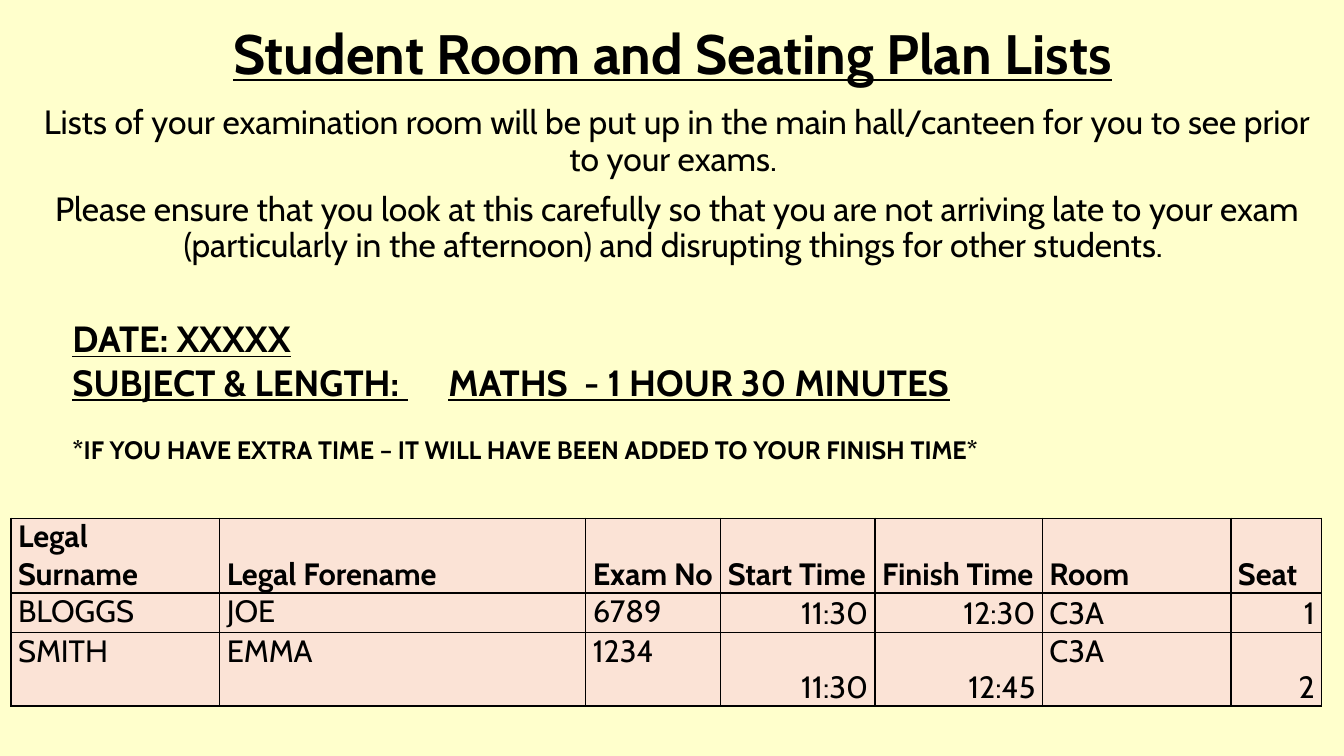
from pptx import Presentation
from pptx.dml.color import RGBColor
from pptx.enum.text import MSO_ANCHOR, MSO_AUTO_SIZE, PP_ALIGN
from pptx.oxml import parse_xml
from pptx.oxml.ns import nsdecls
from pptx.util import Inches, Pt

HUES = {"page": "FFFFCC", "ink": "000000", "cell": "FBE3D6"}
WIDTHS = [2.07, 3.63, 1.34, 1.53, 1.66, 1.87, 0.9]
HEIGHTS = [0.74, 0.39, 0.73]
ROWS = [
    ["Legal Surname", "Legal Forename", "Exam No", "Start Time",
     "Finish Time", "Room", "Seat"],
    ["BLOGGS", "JOE", "6789", "11:30", "12:30", "C3A", "1"],
    ["SMITH", "EMMA", "1234", "11:30", "12:45", "C3A", "2"],
]
RIGHT = {3, 4, 6}
TOP = {(row, col) for row in (1, 2) for col in range(3)} | {(2, 5)}
INTRO = [
    "Lists of your examination room will be put up in the main hall/canteen "
    "for you to see prior to your exams. ",
    "Please ensure that you look at this carefully so that you are not "
    "arriving late to your exam (particularly in the afternoon) and "
    "disrupting things for other students. ",
]
NOTE = "*IF YOU HAVE EXTRA TIME – IT WILL HAVE BEEN ADDED TO YOUR FINISH TIME*"


class Deck:
    """Holds the style and the current slide, and adds each kind of element."""

    def __init__(self):
        self.show = Presentation()
        self.show.slide_width = Inches(13.33)
        self.show.slide_height = Inches(7.5)
        self.slide = self.show.slides.add_slide(self.show.slide_layouts[1])
        self.font = "Cabin"
        fill = self.slide.background.fill
        fill.solid()
        fill.fore_color.rgb = self.hue("page")

    def hue(self, name):
        return RGBColor.from_string(HUES[name])

    def place(self, shape, *box):
        shape.left, shape.top, shape.width, shape.height = map(Inches, box)

    def run(self, para, text, size, bold=False, line=False):
        run = para.add_run()
        run.text = text
        font = run.font
        font.name, font.size = self.font, Pt(size)
        font.bold, font.underline = bold, line
        font.color.rgb = self.hue("ink")

    def title(self, text, *box):
        shape = self.slide.shapes.title
        self.place(shape, *box)
        frame = shape.text_frame
        frame.auto_size = MSO_AUTO_SIZE.NONE
        frame.vertical_anchor = MSO_ANCHOR.MIDDLE
        para = frame.paragraphs[0]
        para.alignment, para.line_spacing = PP_ALIGN.CENTER, 0.9
        self.run(para, text, 39.6, True, True)

    def body(self, texts, *box):
        shape = self.slide.placeholders[1]
        self.place(shape, *box)
        frame = shape.text_frame
        frame.auto_size = MSO_AUTO_SIZE.NONE
        for i, text in enumerate(texts):
            para = frame.add_paragraph() if i else frame.paragraphs[0]
            para.alignment, para.line_spacing = PP_ALIGN.CENTER, 0.9
            para.space_before = Pt(10)
            props = para._p.get_or_add_pPr()
            props.set("marL", "0")
            props.set("indent", "0")
            props.append(parse_xml(f"<a:buNone {nsdecls('a')}/>"))
            self.run(para, text, 24)

    def exam(self, *box):
        shape = self.slide.shapes.add_textbox(*map(Inches, box))
        frame = shape.text_frame
        frame.word_wrap = True
        frame.auto_size = MSO_AUTO_SIZE.SHAPE_TO_FIT_TEXT
        self.run(frame.paragraphs[0], "DATE: XXXXX", 26, True, True)
        para = frame.add_paragraph()
        para._p.get_or_add_pPr().append(parse_xml(
            f'<a:tabLst {nsdecls("a")}>'
            f'<a:tab pos="{Inches(3.73)}" algn="l"/></a:tabLst>'))
        self.run(para, "SUBJECT & LENGTH: ", 26, True, True)
        self.run(para, "\t", 26, True)
        self.run(para, "MATHS  - 1 HOUR 30 MINUTES", 26, True, True)
        para = frame.add_paragraph()
        para.space_before = Pt(22)
        self.run(para, NOTE, 18, True)

    def edge(self, cell):
        props = cell._tc.get_or_add_tcPr()
        for side in "LRTB":
            props.append(parse_xml(
                f'<a:ln{side} {nsdecls("a")} w="{Pt(1)}"><a:solidFill>'
                f'<a:srgbClr val="{HUES["ink"]}"/></a:solidFill></a:ln{side}>'))

    def table(self, rows, left, top):
        box = (left, top, sum(WIDTHS), sum(HEIGHTS))
        table = self.slide.shapes.add_table(
            len(rows), len(WIDTHS), *map(Inches, box)).table
        table.first_row = table.horz_banding = False
        for col, width in zip(table.columns, WIDTHS):
            col.width = Inches(width)
        for r, (line, height) in enumerate(zip(rows, HEIGHTS)):
            table.rows[r].height = Inches(height)
            for c, text in enumerate(line):
                cell = table.cell(r, c)
                cell.margin_left = cell.margin_right = Inches(0.07)
                cell.margin_top = cell.margin_bottom = 0
                high = (r, c) in TOP
                cell.vertical_anchor = (
                    MSO_ANCHOR.TOP if high else MSO_ANCHOR.BOTTOM)
                self.edge(cell)
                cell.fill.solid()
                cell.fill.fore_color.rgb = self.hue("cell")
                para = cell.text_frame.paragraphs[0]
                if r and c in RIGHT:
                    para.alignment = PP_ALIGN.RIGHT
                self.run(para, text, 22, r == 0)


def main():
    deck = Deck()
    deck.title("Student Room and Seating Plan Lists", 0.92, 0.2, 11.5, 0.72)
    deck.body(INTRO, 0.2, 1, 13.03, 6.5)
    deck.table(ROWS, 0.11, 5.14)
    deck.exam(0.62, 3.09, 10.04, 1.58)
    deck.show.save("out.pptx")


if __name__ == "__main__":
    main()
